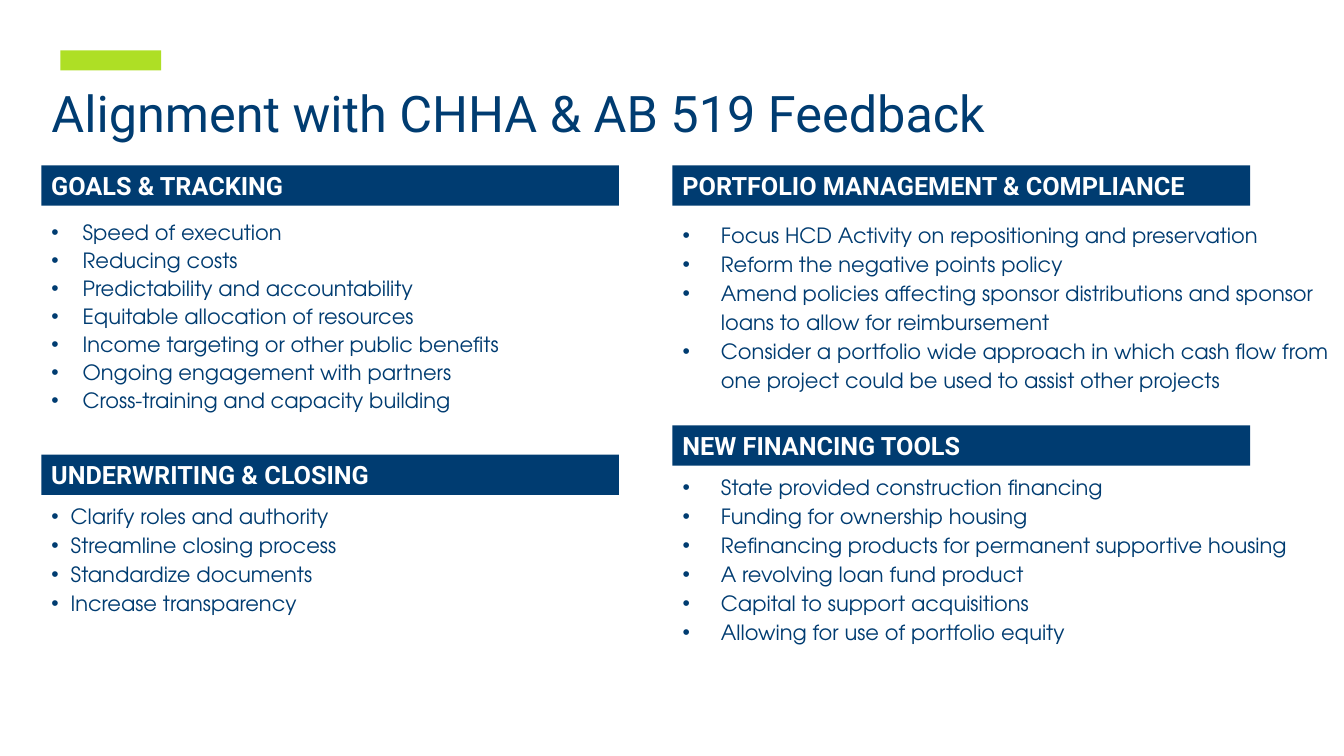
"""Build the slide that sets out alignment with CHHA and AB 519 feedback."""
import pptx
import pptx.dml.color
import pptx.enum.shapes
import pptx.enum.text
import pptx.util
from lxml import etree
from pptx.util import Inches

THEME = {
    "navy": pptx.dml.color.RGBColor.from_string("003C71"),
    "lime": pptx.dml.color.RGBColor.from_string("AEDF25"),
    "white": pptx.dml.color.RGBColor.from_string("FFFFFF"),
    "heading_font": "Roboto",
    "list_font": "TeX Gyre Adventor",
    "title_size": 36,
    "banner_size": 18,
    "list_size": 15,
}
TOP = pptx.enum.text.MSO_ANCHOR.TOP
MIDDLE = pptx.enum.text.MSO_ANCHOR.MIDDLE


def write(frame, text, *, size, font, color, bold=False, anchor=TOP,
          indent=None, line_spacing=1.0, space_after=0):
    """Fill a text frame with one paragraph per line of text."""
    frame.word_wrap = True
    frame.auto_size = pptx.enum.text.MSO_AUTO_SIZE.NONE
    frame.vertical_anchor = anchor
    frame.text = text
    for paragraph in frame.paragraphs:
        if indent:
            properties = paragraph._p.get_or_add_pPr()
            properties.set("marL", str(Inches(indent)))
            properties.set("indent", str(-Inches(indent)))
            bullet = etree.SubElement(properties, pptx.oxml.ns.qn("a:buChar"))
            bullet.set("char", "•")
        paragraph.alignment = pptx.enum.text.PP_ALIGN.LEFT
        paragraph.line_spacing = line_spacing
        paragraph.space_before = pptx.util.Pt(0)
        paragraph.space_after = pptx.util.Pt(space_after)
        paragraph.font.size = pptx.util.Pt(size)
        paragraph.font.name = font
        paragraph.font.bold = bold
        paragraph.font.color.rgb = color


def add_bar(left, top, width, height, color):
    """Add a plain filled rectangle."""
    bar = slide.shapes.add_shape(
        pptx.enum.shapes.MSO_SHAPE.RECTANGLE,
        Inches(left), Inches(top), Inches(width), Inches(height))
    bar.shadow.inherit = False
    bar.fill.solid()
    bar.fill.fore_color.rgb = color
    bar.line.fill.background()
    return bar


deck = pptx.Presentation()
deck.slide_width, deck.slide_height = Inches(13.33), Inches(7.5)
slide = deck.slides.add_slide(deck.slide_layouts.get_by_name("Comparison"))

add_bar(0.6, 0.5, 1, 0.2, THEME["lime"])

title = slide.shapes.title
title.left, title.top = Inches(0.41), Inches(0.83)
title.width, title.height = Inches(12.27), Inches(1.25)
write(title.text_frame, "Alignment with CHHA & AB 519 Feedback",
      size=THEME["title_size"], font=THEME["heading_font"],
      color=THEME["navy"], line_spacing=0.9)

LEFT_COLUMN, RIGHT_COLUMN = 0.41, 6.67
sections = [
    ("GOALS & TRACKING", LEFT_COLUMN, 1.64, (2.13, 5.03, 2.32),
     {"indent": 0.31, "space_after": 2},
     ["Speed of execution",
      "Reducing costs",
      "Predictability and accountability",
      "Equitable allocation of resources",
      "Income targeting or other public benefits",
      "Ongoing engagement with partners",
      "Cross-training and capacity building"]),
    ("UNDERWRITING & CLOSING", LEFT_COLUMN, 4.51, (4.91, 5.18, 1.58),
     {"indent": 0.19, "line_spacing": 1.15},
     ["Clarify roles and authority",
      "Streamline closing process",
      "Standardize documents",
      "Increase transparency"]),
    ("PORTFOLIO MANAGEMENT & COMPLIANCE", RIGHT_COLUMN, 1.64, (2.12, 6.67, 1.82),
     {"indent": 0.38, "line_spacing": 1.15},
     ["Focus HCD Activity on repositioning and preservation",
      "Reform the negative points policy",
      "Amend policies affecting sponsor distributions and sponsor loans "
      "to allow for reimbursement",
      "Consider a portfolio wide approach in which cash flow from one project "
      "could be used to assist other projects"]),
    ("NEW FINANCING TOOLS", RIGHT_COLUMN, 4.22, (4.62, 6.67, 1.82),
     {"indent": 0.38, "line_spacing": 1.15},
     ["State provided construction financing",
      "Funding for ownership housing",
      "Refinancing products for permanent supportive housing",
      "A revolving loan fund product",
      "Capital to support acquisitions",
      "Allowing for use of portfolio equity"]),
]

for number, (heading, left, banner_top, area, spacing, points) in enumerate(sections, 1):
    banner = add_bar(left, banner_top, 5.73, 0.4, THEME["navy"])
    write(banner.text_frame, heading, size=THEME["banner_size"],
          font=THEME["heading_font"], color=THEME["white"], bold=True, anchor=MIDDLE)

    point_list = slide.placeholders[number]
    list_top, list_width, list_height = area
    point_list.left, point_list.top = Inches(left), Inches(list_top)
    point_list.width, point_list.height = Inches(list_width), Inches(list_height)
    write(point_list.text_frame, "\n".join(points), size=THEME["list_size"],
          font=THEME["list_font"], color=THEME["navy"], **spacing)

deck.save("out.pptx")
